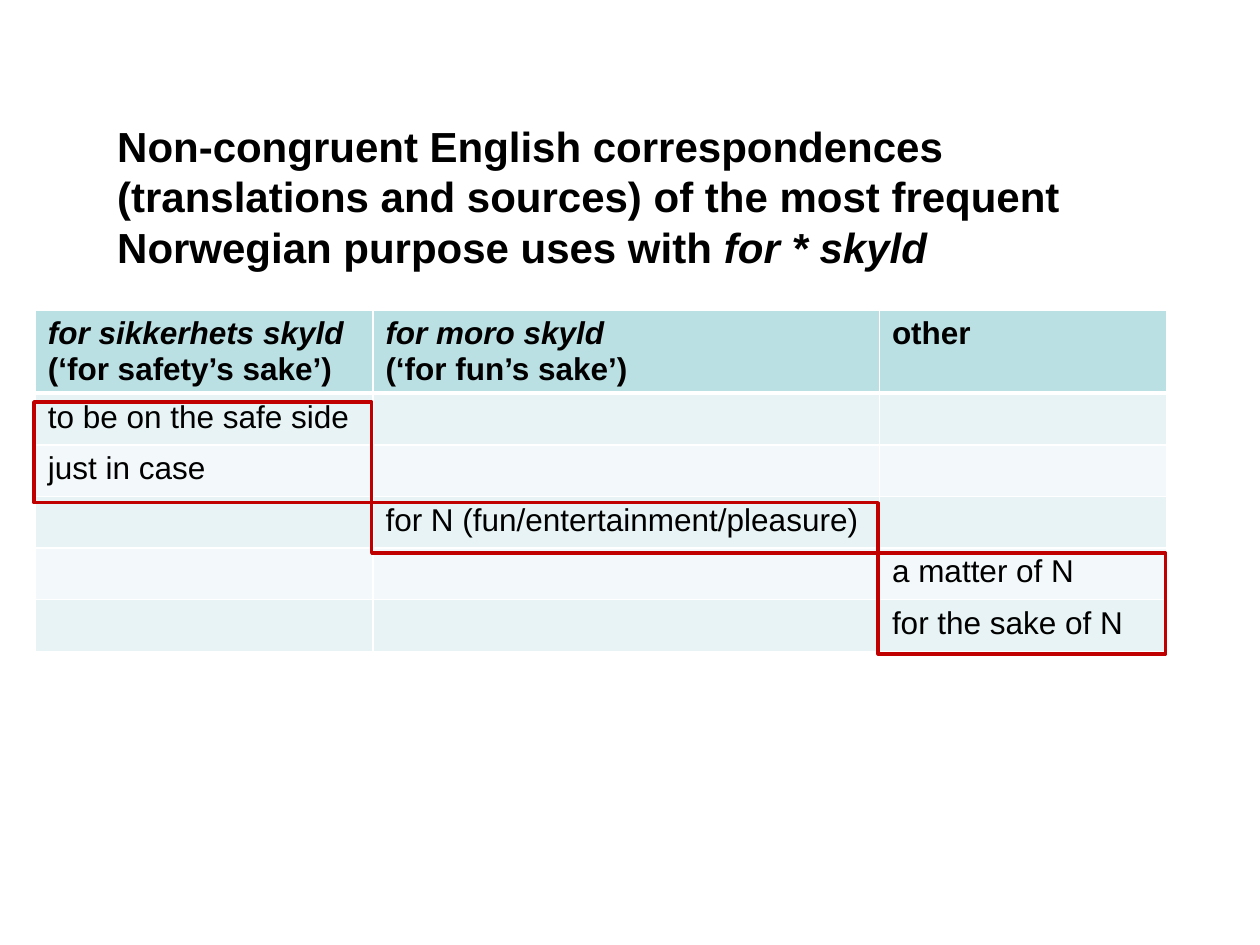
from itertools import accumulate

from lxml import etree
from pptx import Presentation
from pptx.dml.color import RGBColor
from pptx.enum import shapes, text
from pptx.oxml import ns
from pptx.util import Inches, Pt

HUES = {"ink": "000000", "head": "BBE0E3", "odd": "E7F3F4",
        "even": "F3F9FA", "rule": "FFFFFF", "mark": "C00000"}
FONT = "Arial"
COLS = [2.68, 4.02, 2.28]
HEADS = [["for sikkerhets skyld", "(‘for safety’s sake’)"],
         ["for moro skyld", "(‘for fun’s sake’)"],
         ["other"]]
ROWS = [["to be on the safe side", "", ""],
        ["just in case", "", ""],
        ["", "for N (fun/entertainment/pleasure)", ""],
        ["", "", "a matter of N"],
        ["", "", "for the sake of N"]]
# Marked blocks: column, first body row, row count
MARKS = [(0, 0, 2), (1, 2, 1), (2, 3, 2)]


def hue(name):
    return RGBColor.from_string(HUES[name])


def style(para, size, bold=False, italic=None):
    font = para.font
    font.name, font.size, font.bold = FONT, Pt(size), bold
    font.italic = italic
    font.color.rgb = hue("ink")


def add_title(slide):
    title = slide.shapes.title
    title.left, title.top = Inches(0.83), Inches(0.93)
    title.width, title.height = Inches(8.66), Inches(1.25)
    frame = title.text_frame
    frame.auto_size = text.MSO_AUTO_SIZE.NONE
    frame.vertical_anchor = text.MSO_ANCHOR.MIDDLE
    para = frame.paragraphs[0]
    para.alignment = text.PP_ALIGN.LEFT
    para.add_run().text = ("Non-congruent English correspondences (translations and "
                           "sources) of the most frequent Norwegian purpose uses with ")
    term = para.add_run()
    term.text = "for * skyld"
    term.font.italic = True
    style(para, 24, bold=True)


def set_edges(cell, base):
    props = cell._tc.get_or_add_tcPr()
    for side, width in (("L", 1), ("R", 1), ("T", 1), ("B", base)):
        line = etree.SubElement(props, ns.qn(f"a:ln{side}"), w=str(Pt(width)))
        fill = etree.SubElement(line, ns.qn("a:solidFill"))
        etree.SubElement(fill, ns.qn("a:srgbClr"), val=HUES["rule"])


def fill_cell(cell, lines, tone, head=False):
    set_edges(cell, 3 if head else 1)
    cell.fill.solid()
    cell.fill.fore_color.rgb = hue(tone)
    cell.text = "\n".join(lines)
    for i, para in enumerate(cell.text_frame.paragraphs):
        # The Norwegian phrase stands above its gloss
        style(para, 18, bold=head, italic=len(lines) > 1 and i == 0)


def add_grid(slide):
    frame = slide.shapes.add_table(len(ROWS) + 1, len(COLS), Inches(0.28), Inches(2.46),
                                   Inches(sum(COLS)), Inches(2.7))
    table = frame.table
    for col, width in zip(table.columns, COLS):
        col.width = Inches(width)
    for i, row in enumerate(table.rows):
        row.height = Inches(0.41 if i else 0.65)
    for c, lines in enumerate(HEADS):
        fill_cell(table.cell(0, c), lines, "head", head=True)
    for r, row in enumerate(ROWS, 1):
        for c, word in enumerate(row):
            fill_cell(table.cell(r, c), [word], "odd" if r % 2 else "even")


def add_mark(slide, col, row, count):
    lefts = list(accumulate(COLS, initial=0.27))
    step = 0.4
    box = slide.shapes.add_shape(shapes.MSO_SHAPE.RECTANGLE, Inches(lefts[col]),
                                 Inches(3.19 + row * step), Inches(COLS[col]),
                                 Inches(count * step))
    box.shadow.inherit = False
    box.fill.background()
    box.line.color.rgb = hue("mark")
    box.line.width = Pt(2)


def main():
    deck = Presentation()
    deck.slide_width, deck.slide_height = Inches(10), Inches(7.5)
    slide = deck.slides.add_slide(deck.slide_layouts[5])
    add_title(slide)
    add_grid(slide)
    # Red frames around the filled cells
    for mark in MARKS:
        add_mark(slide, *mark)
    deck.save("out.pptx")


if __name__ == "__main__":
    main()
